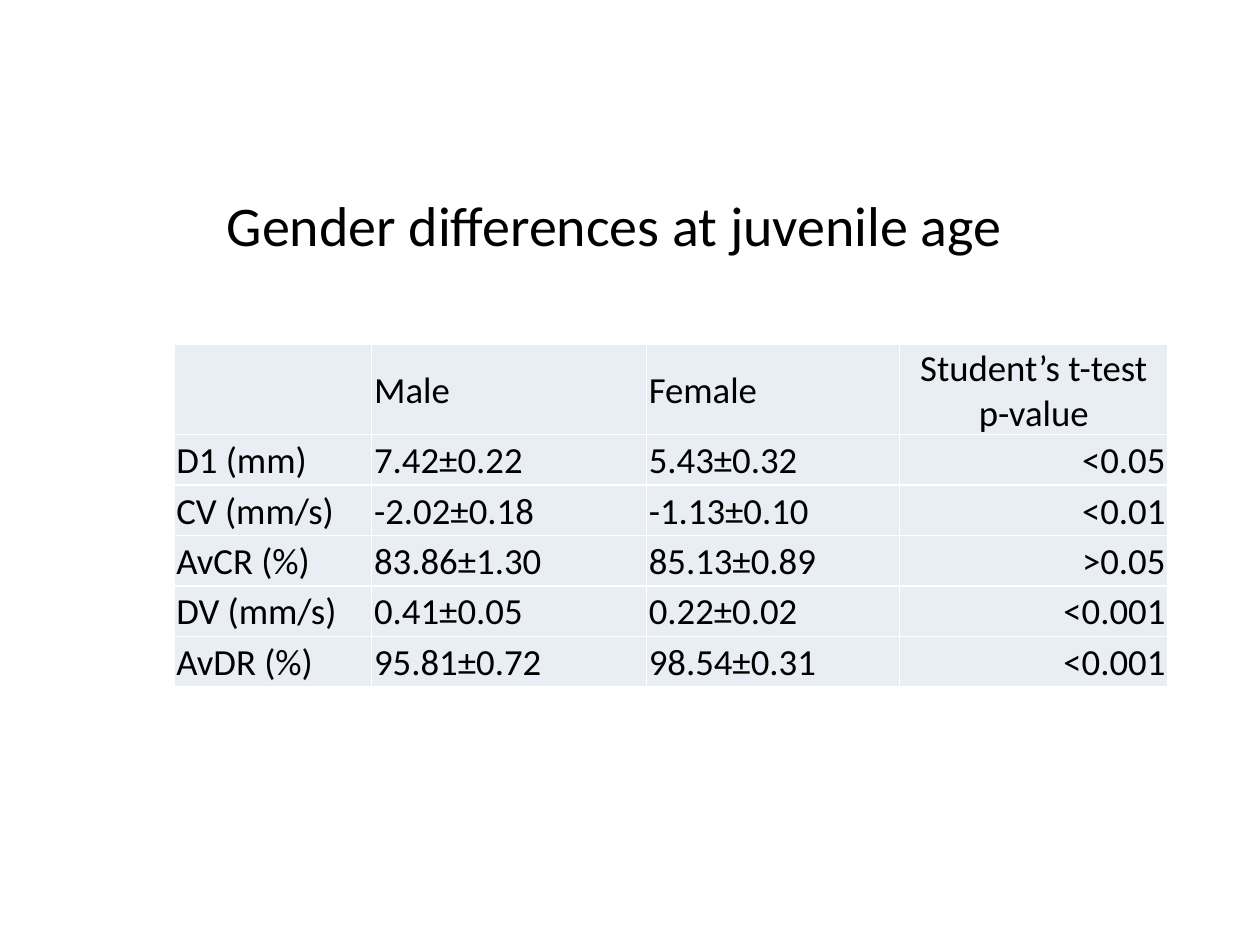
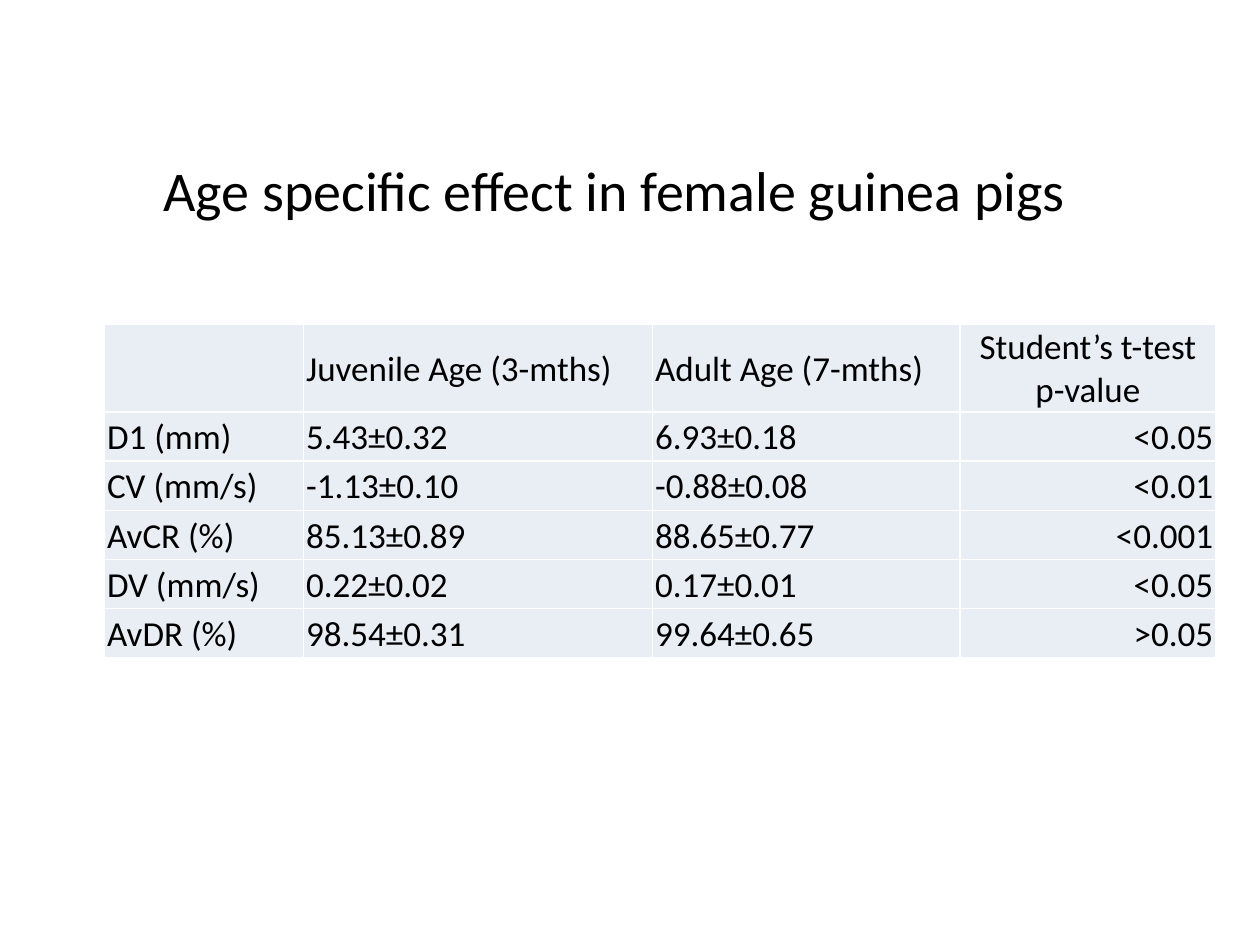
from lxml.etree import SubElement
from pptx import Presentation
from pptx.dml.color import RGBColor
from pptx.enum.text import MSO_ANCHOR as Anchor, PP_ALIGN as Align
from pptx.oxml.ns import qn
from pptx.util import Inches, Pt

FONT = "Calibri"
BLACK, WHITE, CELL_FILL = "000000", "FFFFFF", "E9EDF4"
TITLE_SIZE = 32
P_VALUE_HEADING = "Student’s t-test p-value"
COLUMN_ALIGNMENTS = [Align.LEFT, Align.LEFT, Align.LEFT, Align.RIGHT]
MEASURES = ["D1 (mm)", "CV (mm/s)", "AvCR (%)", "DV (mm/s)", "AvDR (%)"]

# What differs from slide to slide
comparisons = [
    {
        "title": "Gender differences at juvenile age ",
        "title_bottom": 0.05,
        "left": 1.38, "top": 2.73, "size": 21,
        "widths": [1.57, 2.18, 2.01, 2.13],
        "header_height": 0.72, "row_height": 0.4,
        "groups": ["Male", "Female"],
        "results": [
            ["7.42±0.22", "5.43±0.32", "<0.05"],
            ["-2.02±0.18", "-1.13±0.10", "<0.01"],
            ["83.86±1.30", "85.13±0.89", ">0.05"],
            ["0.41±0.05", "0.22±0.02", "<0.001"],
            ["95.81±0.72", "98.54±0.31", "<0.001"],
        ],
    },
    {
        "title": "Age specific effect in female guinea pigs ",
        "title_bottom": 0.59,
        "left": 0.83, "top": 2.57, "size": 20,
        "widths": [1.58, 2.77, 2.44, 2.03],
        "header_height": 0.7, "row_height": 0.39,
        "groups": ["Juvenile Age (3-mths)", "Adult Age (7-mths)"],
        "results": [
            ["5.43±0.32", "6.93±0.18", "<0.05"],
            ["-1.13±0.10", "-0.88±0.08", "<0.01"],
            ["85.13±0.89", "88.65±0.77", "<0.001"],
            ["0.22±0.02", "0.17±0.01", "<0.05"],
            ["98.54±0.31", "99.64±0.65", ">0.05"],
        ],
    },
]


def color(value):
    return RGBColor.from_string(value)


def write(text_frame, text, size, alignment):
    paragraph = text_frame.paragraphs[0]
    paragraph.alignment = alignment
    run = paragraph.add_run()
    run.text = text
    run.font.name = FONT
    run.font.size = Pt(size)
    run.font.color.rgb = color(BLACK)


presentation = Presentation()
presentation.slide_width = Inches(10)
presentation.slide_height = Inches(7.5)
blank_layout = presentation.slide_layouts[6]

for comparison in comparisons:
    slide = presentation.slides.add_slide(blank_layout)

    # Title
    title = slide.shapes.add_textbox(Inches(0.43), Inches(1.15), Inches(9), Inches(1.25))
    title_frame = title.text_frame
    title_frame.word_wrap = True
    title_frame.vertical_anchor = Anchor.MIDDLE
    title_frame.margin_bottom = Inches(comparison["title_bottom"])
    write(title_frame, comparison["title"], TITLE_SIZE, Align.CENTER)

    # Table grid
    rows = [["", *comparison["groups"], P_VALUE_HEADING]]
    rows += [[measure, *result] for measure, result in zip(MEASURES, comparison["results"])]
    widths = comparison["widths"]
    heights = [comparison["header_height"]] + [comparison["row_height"]] * len(MEASURES)
    table = slide.shapes.add_table(
        len(rows), len(widths), Inches(comparison["left"]), Inches(comparison["top"]),
        Inches(sum(widths)), Inches(sum(heights))).table
    table.first_row = False
    table.horz_banding = False
    for column, width in zip(table.columns, widths):
        column.width = Inches(width)
    for row, height in zip(table.rows, heights):
        row.height = Inches(height)

    # Cells
    for row_index, texts in enumerate(rows):
        for column_index, text in enumerate(texts):
            cell = table.cell(row_index, column_index)
            cell.vertical_anchor = Anchor.MIDDLE
            cell.margin_left = cell.margin_right = cell.margin_top = Inches(0.02)
            cell.margin_bottom = 0
            properties = cell._tc.get_or_add_tcPr()
            for side in ("a:lnL", "a:lnR", "a:lnT", "a:lnB"):
                border = SubElement(properties, qn(side), w=str(Pt(1)))
                border_fill = SubElement(border, qn("a:solidFill"))
                SubElement(border_fill, qn("a:srgbClr"), val=WHITE)
            cell.fill.solid()
            cell.fill.fore_color.rgb = color(CELL_FILL)
            if text:
                alignment = COLUMN_ALIGNMENTS[column_index]
                if text == P_VALUE_HEADING:
                    alignment = Align.CENTER
                write(cell.text_frame, text, comparison["size"], alignment)

presentation.save("out.pptx")
